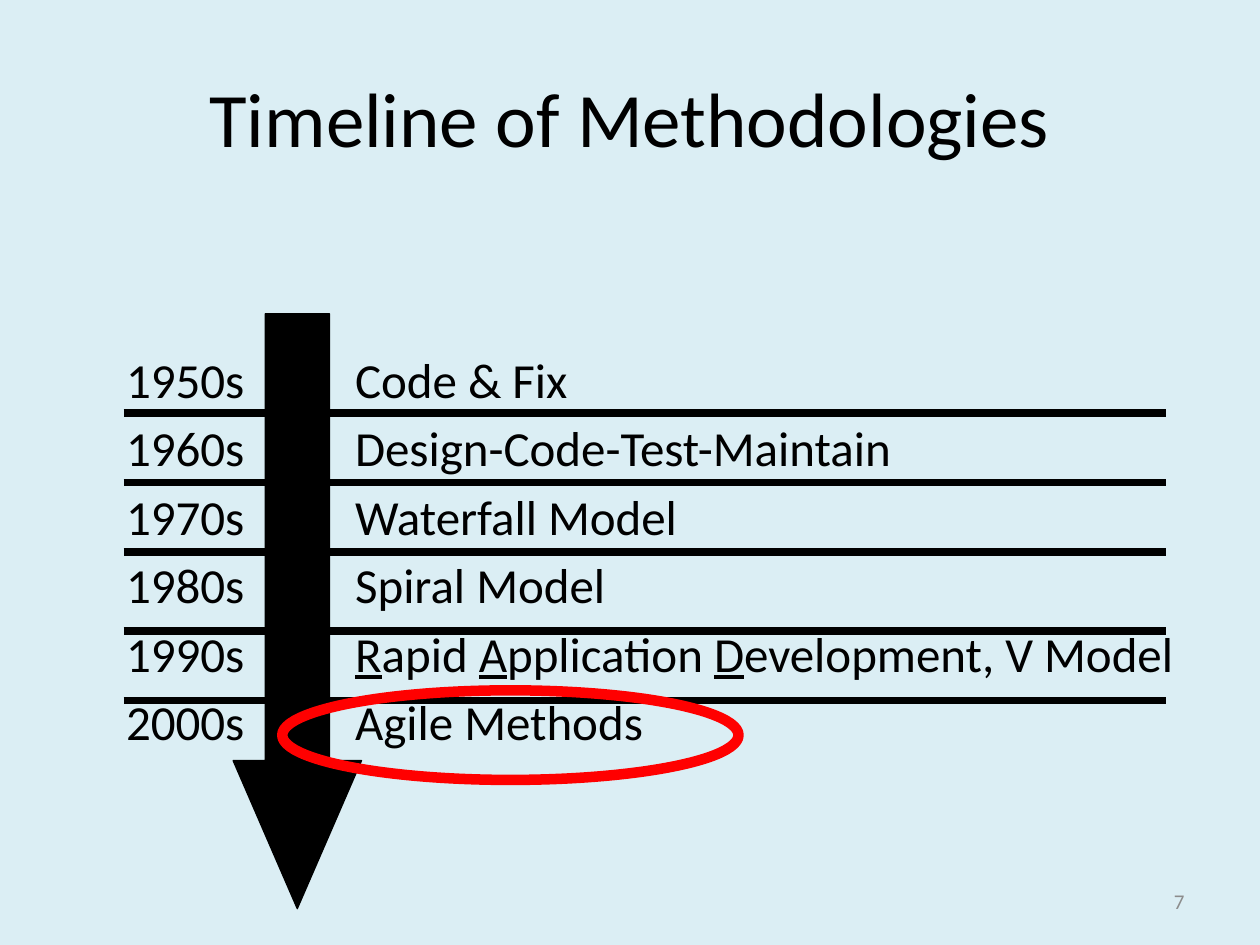
from lxml import etree
from pptx import Presentation
from pptx.dml.color import RGBColor
from pptx.enum.shapes import MSO_CONNECTOR, MSO_SHAPE
from pptx.enum.text import MSO_ANCHOR, MSO_AUTO_SIZE, PP_ALIGN
from pptx.oxml.ns import qn
from pptx.util import Pt

STRAIGHT = MSO_CONNECTOR.STRAIGHT
DOWN_ARROW, OVAL = MSO_SHAPE.DOWN_ARROW, MSO_SHAPE.OVAL
TOP, MIDDLE = MSO_ANCHOR.TOP, MSO_ANCHOR.MIDDLE
LEFT, CENTER, RIGHT = PP_ALIGN.LEFT, PP_ALIGN.CENTER, PP_ALIGN.RIGHT
FIXED_SIZE = MSO_AUTO_SIZE.NONE

FONT = "Calibri"
COLORS = {"background": "DBEEF4", "ink": "000000", "number": "8C8C8C", "highlight": "FF0000"}

# Underscores enclose the underlined letters
METHODS = {
    "1950s": "Code & Fix",
    "1960s": "Design-Code-Test-Maintain",
    "1970s": "Waterfall Model",
    "1980s": "Spiral Model",
    "1990s": "_R_apid _A_pplication _D_evelopment, V Model",
    "2000s": "Agile Methods",
}
METHODS_OFFSET = 130.9
RULE_OFFSETS = [39.6, 79.2, 118.8, 164.2, 203.8]


def color(name):
    return RGBColor.from_string(COLORS[name])


def place(shape, box):
    shape.left, shape.top, shape.width, shape.height = map(Pt, box)


def style(paragraph, size, color_name, alignment):
    paragraph.alignment = alignment
    for span in paragraph.runs:
        span.font.name = FONT
        span.font.size = Pt(size)
        span.font.color.rgb = color(color_name)


def add_title(page, box):
    title = page.shapes.title
    place(title, box)
    frame = title.text_frame
    frame.text = "Timeline of Methodologies"
    frame.vertical_anchor = MIDDLE
    style(frame.paragraphs[0], 44, "ink", CENTER)


def add_page_number(page, box):
    frame = page.shapes.add_textbox(*map(Pt, box)).text_frame
    frame.word_wrap = True
    frame.vertical_anchor = MIDDLE
    frame.text = "7"
    style(frame.paragraphs[0], 12, "number", RIGHT)


def fill_column(body, box, entries):
    """One plain list, without bullets."""
    place(body, box)
    frame = body.text_frame
    frame.auto_size = FIXED_SIZE
    frame.vertical_anchor = TOP
    for index, entry in enumerate(entries):
        paragraph = frame.add_paragraph() if index else frame.paragraphs[0]
        properties = paragraph._p.get_or_add_pPr()
        properties.set("marL", "0")
        properties.set("indent", "0")
        etree.SubElement(properties, qn("a:buNone"))
        paragraph.space_before = Pt(5.5 if index else 0)
        for part, text in enumerate(entry.split("_")):
            if text:
                span = paragraph.add_run()
                span.text = text
                if part % 2:
                    span.font.underline = True
        style(paragraph, 28, "ink", LEFT)


def add_methods(page, box):
    """Decades and, beside them, their methods."""
    left, top, width, height = box
    fill_column(page.placeholders[1], (left, top, 90, height), METHODS.keys())
    methods_box = (left + METHODS_OFFSET, top, width - METHODS_OFFSET, height)
    fill_column(page.placeholders[2], methods_box, METHODS.values())


def add_timeline(page, box):
    """Time arrow and the rules between decades."""
    left, top, width, height = box
    arrow = page.shapes.add_shape(DOWN_ARROW, Pt(left + 62.6), Pt(top), Pt(73.4), Pt(height))
    arrow.adjustments[0] = 0.5
    arrow.adjustments[1] = 1.153
    arrow.shadow.inherit = False
    arrow.fill.solid()
    arrow.fill.fore_color.rgb = color("ink")
    arrow.line.color.rgb = color("ink")
    arrow.line.width = Pt(0.75)
    for offset in RULE_OFFSETS:
        y = Pt(top + 17.2 + offset)
        rule = page.shapes.add_connector(STRAIGHT, Pt(left), y, Pt(left + width), y)
        rule.line.color.rgb = color("ink")
        rule.line.width = Pt(4.5)
        etree.SubElement(rule._element.spPr, qn("a:effectLst"))


def add_highlight(page, box):
    ring = page.shapes.add_shape(OVAL, *map(Pt, box))
    ring.shadow.inherit = False
    ring.fill.background()
    ring.line.color.rgb = color("highlight")
    ring.line.width = Pt(6)


def main():
    deck = Presentation()
    deck.slide_width, deck.slide_height = Pt(720), Pt(540)
    page = deck.slides.add_slide(deck.slide_layouts[3])
    page.background.fill.solid()
    page.background.fill.fore_color.rgb = color("background")

    add_title(page, (36, 21.6, 648, 90))
    add_page_number(page, (516, 500.5, 168, 28.8))
    add_methods(page, (64.8, 196, 618.5, 284.7))
    add_timeline(page, (70.6, 179.3, 595.4, 340))
    add_highlight(page, (161.3, 394.5, 260.7, 51.2))
    deck.save("out.pptx")


if __name__ == "__main__":
    main()
